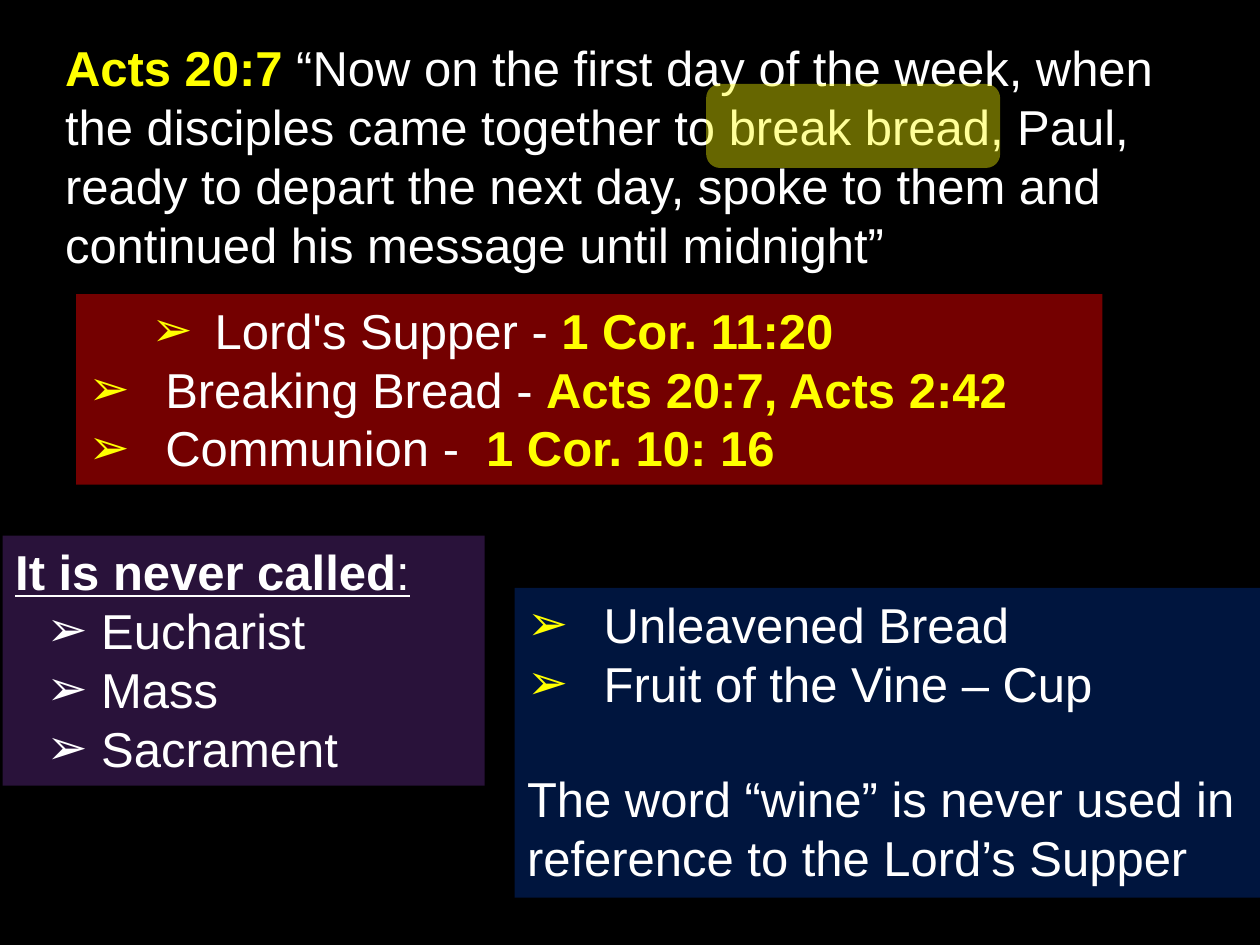
"""Build a slide on the names and elements of the Lord's Supper."""
import pptx
import pptx.dml.color
import pptx.enum.shapes
import pptx.enum.text
import pptx.oxml
import pptx.oxml.ns
import pptx.util
from lxml import etree

Pt = pptx.util.Pt
qn = pptx.oxml.ns.qn
WHITE, YELLOW = "FFFFFF", "FFFF00"


def paint(color_format, color):
    color_format.rgb = pptx.dml.color.RGBColor.from_string(color)


def write(paragraph, text, color=WHITE, bold=False, underline=False):
    run = paragraph.add_run()
    run.text = text
    run.font.name, run.font.size = "Arial", Pt(28)
    run.font.bold, run.font.underline = bold, underline
    paint(run.font.color, color)


presentation = pptx.Presentation()
presentation.slide_width, presentation.slide_height = Pt(720), Pt(540)
slide = presentation.slides.add_slide(presentation.slide_layouts.get_by_name("Comparison"))
slide.background.fill.solid()
paint(slide.background.fill.fore_color, "000000")

places = {place.placeholder_format.idx: place for place in slide.placeholders}
unused = places.pop(3)
unused.element.getparent().remove(unused.element)

bold_yellow = {"color": YELLOW, "bold": True}
heading = {"bold": True, "underline": True}
verse = (
    "“Now on the first day of the week, when the disciples came together to break bread, "
    "Paul, ready to depart the next day, spoke to them and continued his message until midnight”"
)

# Each paragraph: level, left margin, indent, bullet colour, space before, runs
panels = [
    (0, (30, 18, 648, 177), None, [
        (0, 0, 0, None, 0, [("Acts 20:7 ", bold_yellow), (verse, {})]),
    ]),
    (2, (1.5, 306, 275.5, 143), "29123A", [
        (0, 0, 0, None, 0, [("It is never called", heading), (":", {"underline": True})]),
        *[(1, 36, -18, WHITE, 0, [(name, {})]) for name in (" Eucharist", " Mass", " Sacrament")],
    ]),
    (4, (294, 336, 426, 177), "00153E", [
        *[(0, 36, -36, YELLOW, 0, [(element, {})])
          for element in (" Unleavened Bread", " Fruit of the Vine – Cup")],
        (0, 0, 0, None, 32.2,
         [("The word “wine” is never used in reference to the Lord’s Supper", {})]),
    ]),
    (1, (43.5, 168, 586.5, 109), "740000", [
        (1, 72, -36, YELLOW, 0, [("Lord's Supper - ", {}), ("1 Cor. 11:20", bold_yellow)]),
        (1, 36, -36, YELLOW, 0, [(" Breaking Bread - ", {}), ("Acts 20:7, Acts 2:42", bold_yellow)]),
        (1, 36, -36, YELLOW, 0, [(" Communion -  ", {}), ("1 Cor. 10: 16", bold_yellow)]),
    ]),
]

for idx, box, fill, paragraphs in panels:
    panel = places[idx]
    panel.left, panel.top, panel.width, panel.height = map(Pt, box)
    if fill:
        panel.fill.solid()
        paint(panel.fill.fore_color, fill)
    frame = panel.text_frame
    frame.word_wrap = True
    frame.auto_size = pptx.enum.text.MSO_AUTO_SIZE.NONE
    frame.vertical_anchor = pptx.enum.text.MSO_ANCHOR.TOP
    for number, (level, margin, indent, bullet, gap, runs) in enumerate(paragraphs):
        paragraph = frame.add_paragraph() if number else frame.paragraphs[0]
        paragraph.level = level
        paragraph.alignment = pptx.enum.text.PP_ALIGN.LEFT
        paragraph.space_before, paragraph.space_after = Pt(gap), Pt(0)
        properties = paragraph._p.get_or_add_pPr()
        properties.set("marL", str(Pt(margin)))
        properties.set("indent", str(Pt(indent)))
        if bullet:
            bullet_color = etree.SubElement(properties, qn("a:buClr"))
            etree.SubElement(bullet_color, qn("a:srgbClr"), val=bullet)
            etree.SubElement(properties, qn("a:buFont"), typeface="Arial")
            etree.SubElement(properties, qn("a:buChar"), char="➢")
        else:
            etree.SubElement(properties, qn("a:buNone"))
        for text, style in runs:
            write(paragraph, text, **style)

highlight = slide.shapes.add_shape(
    pptx.enum.shapes.MSO_SHAPE.ROUNDED_RECTANGLE, Pt(403.5), Pt(48), Pt(168), Pt(48))
highlight.shadow.inherit = False
highlight.line.fill.background()
highlight.fill.solid()
paint(highlight.fill.fore_color, YELLOW)
tint = highlight.element.spPr.find(qn("a:solidFill")).find(qn("a:srgbClr"))
etree.SubElement(tint, qn("a:alpha"), val="40000")

presentation.save("out.pptx")
